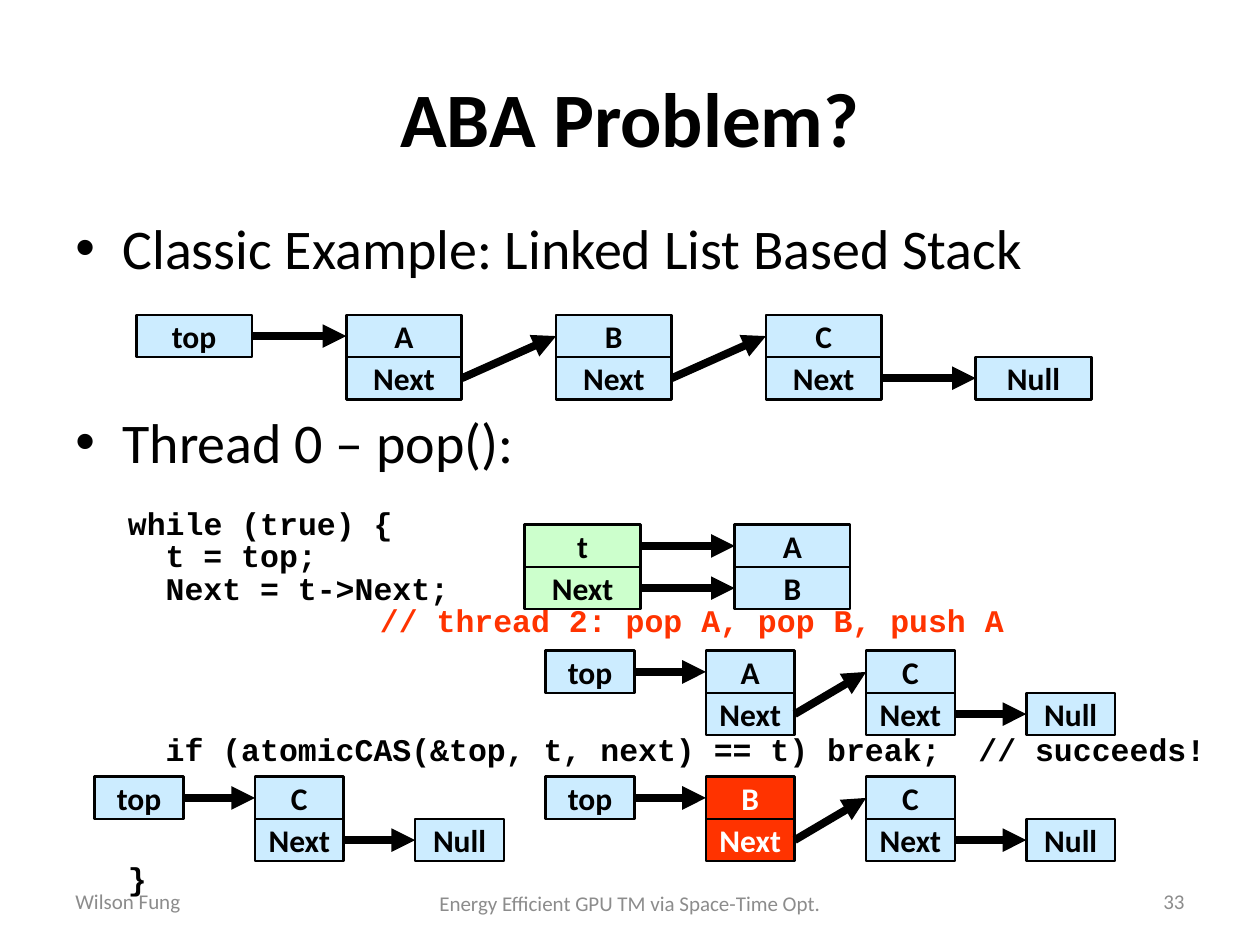
from lxml import etree
from pptx import Presentation
from pptx import util as u
from pptx.dml.color import RGBColor
from pptx.enum import shapes, text
from pptx.oxml.ns import qn

COLORS = {
    "black": "000000", "white": "FFFFFF", "gray": "8C8C8C",
    "node": "CCECFF", "local": "CCFFCC", "alert": "FF3300",
}
ROW = 0.85  # height of one cell, cm
WIDE = {"width": 2.33, "pitch": 4.23}
NARROW = {"width": 1.79, "pitch": 3.23}


class StackSlide:
    body_font, code_font = "Calibri", "Courier New"

    def __init__(self, prs):
        self.slide = prs.slides.add_slide(prs.slide_layouts[5])

    def color(self, name):
        return RGBColor.from_string(COLORS[name])

    def style(self, paragraph, size, color="black", bold=False, font=None):
        for run in paragraph.runs:
            run.font.name = font or self.body_font
            run.font.size = u.Pt(size)
            run.font.bold = bold
            run.font.color.rgb = self.color(color)

    def title(self, wording, left, top, width, height):
        heading = self.slide.shapes.title
        heading.left, heading.top = u.Cm(left), u.Cm(top)
        heading.width, heading.height = u.Cm(width), u.Cm(height)
        frame = heading.text_frame
        frame.text = wording
        frame.vertical_anchor = text.MSO_ANCHOR.MIDDLE
        frame.paragraphs[0].alignment = text.PP_ALIGN.CENTER
        self.style(frame.paragraphs[0], 44, bold=True)

    def frame(self, wording, left, top, width, height):
        box = self.slide.shapes.add_textbox(
            u.Cm(left), u.Cm(top), u.Cm(width), u.Cm(height))
        box.text_frame.word_wrap = True
        box.text_frame.text = wording
        return box.text_frame

    def bullets(self, items, gap, *place):
        frame = self.frame("\n".join(items), *place)
        for index, paragraph in enumerate(frame.paragraphs):
            paragraph.line_spacing = 0.8
            paragraph.space_before = u.Pt(gap if index else 0)
            props = paragraph._p.get_or_add_pPr()
            props.set("marL", str(u.Cm(0.95)))
            props.set("indent", str(u.Cm(-0.95)))
            etree.SubElement(props, qn("a:buFont")).set("typeface", "Arial")
            etree.SubElement(props, qn("a:buChar")).set("char", "•")
            self.style(paragraph, 32)

    def code(self, lines, line_height, *place):
        """Each line is (wording, indent in cm, empty lines above, colour)."""
        frame = self.frame("\n".join(line[0] for line in lines), *place)
        for paragraph, (_, indent, skipped, color) in zip(frame.paragraphs, lines):
            paragraph.line_spacing = 0.85
            paragraph.space_before = u.Pt(skipped * line_height)
            props = paragraph._p.get_or_add_pPr()
            props.set("marL", str(u.Cm(indent)))
            props.set("indent", "0")
            self.style(paragraph, 18, color, True, self.code_font)

    def footer(self, wording, align, *place):
        frame = self.frame(wording, *place)
        frame.vertical_anchor = text.MSO_ANCHOR.MIDDLE
        frame.paragraphs[0].alignment = align
        self.style(frame.paragraphs[0], 12, "gray")

    def cell(self, group, wording, left, top, width, fill="node"):
        box = group.shapes.add_shape(
            shapes.MSO_SHAPE.RECTANGLE,
            u.Cm(left), u.Cm(top), u.Cm(width), u.Cm(ROW))
        box.shadow.inherit = False
        box.fill.solid()
        box.fill.fore_color.rgb = self.color(fill)
        box.line.color.rgb = self.color("black")
        box.line.width = u.Pt(1.5)
        frame = box.text_frame
        frame.word_wrap = False
        frame.vertical_anchor = text.MSO_ANCHOR.MIDDLE
        frame.text = wording
        frame.paragraphs[0].alignment = text.PP_ALIGN.CENTER
        self.style(frame.paragraphs[0], 18,
                   "white" if fill == "alert" else "black", True)
        return box

    def arrow(self, group, source, target):
        pointer = group.shapes.add_connector(
            shapes.MSO_CONNECTOR.STRAIGHT,
            source.left + source.width, source.top + source.height // 2,
            target.left, target.top + target.height // 2)
        pointer.begin_connect(source, 3)
        pointer.end_connect(target, 1)
        pointer.line.color.rgb = self.color("black")
        pointer.line.width = u.Pt(4.5)
        etree.SubElement(pointer.line._get_or_add_ln(),
                         qn("a:tailEnd")).set("type", "triangle")
        etree.SubElement(pointer._element.spPr, qn("a:effectLst"))

    def linked_list(self, nodes, left, top, width, pitch, alert=None):
        """Draw top -> nodes (value over Next) -> Null."""
        group = self.slide.shapes.add_group_shape()
        source = self.cell(group, "top", left, top, width)
        for step, node in enumerate(nodes, 1):
            x = left + step * pitch
            fill = "alert" if node == alert else "node"
            value = self.cell(group, node, x, top, width, fill)
            following = self.cell(group, "Next", x, top + ROW, width, fill)
            self.arrow(group, source, value)
            source = following
        null = self.cell(group, "Null", left + (len(nodes) + 1) * pitch,
                         top + ROW, width)
        self.arrow(group, source, null)

    def variable(self, name, value, left, top, width, pitch):
        group = self.slide.shapes.add_group_shape()
        holder = self.cell(group, name, left, top, width, "local")
        self.arrow(group, holder,
                   self.cell(group, value, left + pitch, top, width))


def main():
    prs = Presentation()
    prs.slide_width, prs.slide_height = u.Cm(25.4), u.Cm(19.05)
    page = StackSlide(prs)

    # Title and bullets
    page.title("ABA Problem?", 1.27, 0.76, 22.86, 3.18)
    page.bullets(["Classic Example: Linked List Based Stack",
                  "Thread 0 – pop():"], 80, 1.27, 4.45, 22.86, 5.7)

    # Code of pop()
    page.code([
        ("while (true) {", 0, 0, "black"),
        ("t = top;", 0.76, 0, "black"),
        ("Next = t->Next;", 0.76, 0, "black"),
        ("// thread 2: pop A, pop B, push A", 5.08, 0, "alert"),
        ("if (atomicCAS(&top, t, next) == t) break;  // succeeds!",
         0.76, 3, "black"),
        ("}", 0, 3, "black"),
    ], 18.45, 2.33, 10.16, 22.43, 8.03)

    # Initial stack
    page.linked_list("ABC", 2.75, 6.35, **WIDE)

    # Local variables of thread 0
    for row, (name, value) in enumerate([("t", "A"), ("Next", "B")]):
        page.variable(name, value, 10.58, 10.58 + row * ROW, **WIDE)

    # Stack after thread 2, after the swap, and as it should be
    page.linked_list("AC", 11, 13.12, **NARROW)
    page.linked_list("BC", 11, 15.66, alert="B", **NARROW)
    page.linked_list("C", 1.91, 15.66, **NARROW)

    # Footer
    align = text.PP_ALIGN
    page.footer("Wilson Fung", align.LEFT, 1.27, 17.65, 5.92, 1.02)
    page.footer("Energy Efficient GPU TM via Space-Time Opt.", align.CENTER,
                8.1, 17.73, 9.2, 0.94)
    page.footer("33", align.RIGHT, 18.21, 17.65, 5.92, 1.02)

    prs.save("out.pptx")


if __name__ == "__main__":
    main()
